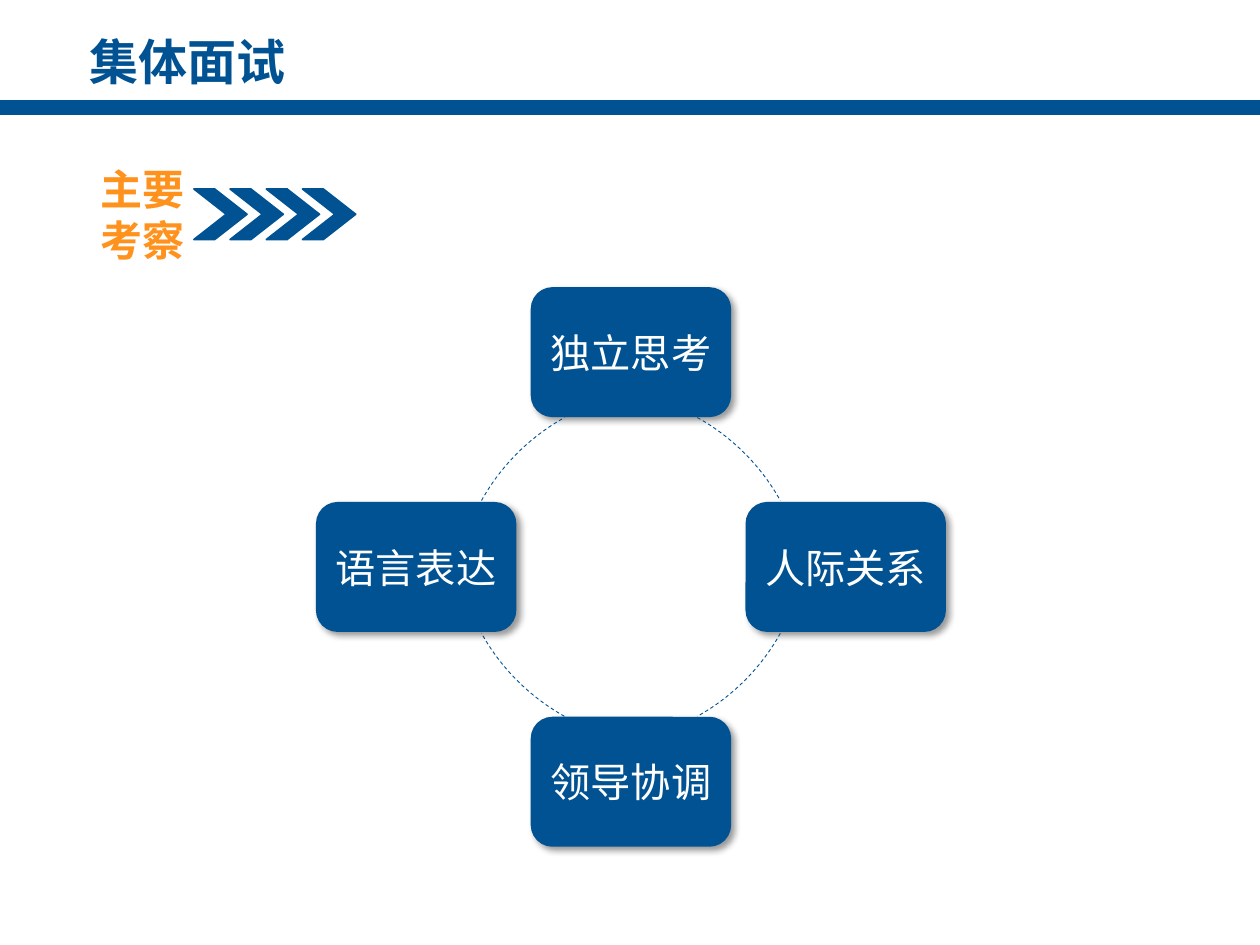
from dataclasses import dataclass
from typing import NamedTuple

from lxml.etree import SubElement
from pptx import Presentation
from pptx.dml.color import RGBColor
from pptx.enum.dml import MSO_LINE
from pptx.enum.shapes import MSO_SHAPE as Preset
from pptx.enum.text import MSO_ANCHOR as Anchor, PP_ALIGN as Align
from pptx.oxml import parse_xml
from pptx.oxml.ns import nsdecls, qn
from pptx.util import Cm, Pt


@dataclass(frozen=True)
class Theme:
    blue: RGBColor = RGBColor(0x00, 0x52, 0x92)
    orange: RGBColor = RGBColor(0xFF, 0x92, 0x1D)
    white: RGBColor = RGBColor(0xFF, 0xFF, 0xFF)
    font: str = "Noto Sans CJK SC"
    title_size: int = 28
    label_size: int = 24
    box_size: int = 23


class Box(NamedTuple):
    """A frame in centimetres."""
    left: float
    top: float
    width: float
    height: float

    def lengths(self) -> list:
        return [Cm(value) for value in self]


class Aspect(NamedTuple):
    """One station of the cycle, with its direction from the centre."""
    text: str
    across: int
    down: int


THEME = Theme()
ASPECTS = [
    Aspect("独立思考", 0, -1),
    Aspect("人际关系", 1, 0),
    Aspect("领导协调", 0, 1),
    Aspect("语言表达", -1, 0),
]

# Cycle geometry
CENTER_X, CENTER_Y = 12.72, 11.43
RADIUS = 4.33
BOX_WIDTH, BOX_HEIGHT = 4.04, 2.62
ARC_SHIFT = 0.77
ARC_START, ARC_SWEEP = 299.14, 31.72
ARC_UNIT = 0.6  # adjustment value per degree

# Chevron row
CHEVRON = Box(3.91, 3.81, 1.07, 1.02)
CHEVRON_COUNT, CHEVRON_STEP = 4, 0.73


def centered(x: float, y: float, width: float, height: float) -> Box:
    return Box(x - width / 2, y - height / 2, width, height)


def write(shape, text: str, size: int, color: RGBColor,
          bold: bool = False, align: Align = Align.LEFT) -> None:
    shape.text_frame.word_wrap = True
    paragraph = shape.text_frame.paragraphs[0]
    paragraph.text = text
    paragraph.alignment = align
    font = paragraph.font
    font.size, font.bold, font.name = Pt(size), bold, THEME.font
    font.color.rgb = color
    properties = paragraph._p.pPr.find(qn("a:defRPr"))
    SubElement(properties, qn("a:ea"), typeface=THEME.font)


def add_solid(slide, preset: Preset, box: Box, outlined: bool = True):
    shape = slide.shapes.add_shape(preset, *box.lengths())
    shape.shadow.inherit = False
    shape.fill.solid()
    shape.fill.fore_color.rgb = THEME.blue
    if outlined:
        shape.line.color.rgb = THEME.blue
        shape.line.width = Pt(1)
    else:
        shape.line.fill.background()
    return shape


def add_drop_shadow(shape) -> None:
    effects = shape._element.spPr.find(qn("a:effectLst"))
    effects.append(parse_xml(
        f'<a:outerShdw {nsdecls("a")} blurRad="{Pt(4)}" dist="{Pt(3)}" '
        'dir="2700000" algn="tl" rotWithShape="0"><a:srgbClr val="000000">'
        '<a:alpha val="40000"/></a:srgbClr></a:outerShdw>'))


def add_aspect(slide, aspect: Aspect) -> None:
    box = centered(CENTER_X + aspect.across * RADIUS,
                   CENTER_Y + aspect.down * RADIUS, BOX_WIDTH, BOX_HEIGHT)
    shape = add_solid(slide, Preset.ROUNDED_RECTANGLE, box, outlined=False)
    add_drop_shadow(shape)
    shape.text_frame.vertical_anchor = Anchor.MIDDLE
    write(shape, aspect.text, THEME.box_size, THEME.white, align=Align.CENTER)


def add_arc(slide, index: int, start: Aspect, end: Aspect) -> None:
    # Each arc's centre lies slightly away from the corner it spans
    x = CENTER_X - ARC_SHIFT * (start.across + end.across)
    y = CENTER_Y - ARC_SHIFT * (start.down + end.down)
    box = centered(x, y, 2 * RADIUS, 2 * RADIUS)
    arc = slide.shapes.add_shape(Preset.ARC, *box.lengths())
    arc.shadow.inherit = False
    first = (ARC_START + 90 * index) % 360
    arc.adjustments[0] = first * ARC_UNIT
    arc.adjustments[1] = (first + ARC_SWEEP) * ARC_UNIT
    arc.fill.background()
    arc.line.color.rgb = THEME.blue
    arc.line.width = Pt(0.5)
    arc.line.dash_style = MSO_LINE.DASH


def main() -> None:
    presentation = Presentation()
    presentation.slide_width, presentation.slide_height = Cm(25.4), Cm(19.05)
    slide = presentation.slides.add_slide(presentation.slide_layouts[5])

    # Title and rule
    title = slide.shapes.title
    title.left, title.top, title.width, title.height = Box(
        1.55, 0.51, 4.9, 1.45).lengths()
    write(title, "集体面试", THEME.title_size, THEME.blue, bold=True)
    add_solid(slide, Preset.RECTANGLE, Box(0, 2.03, 25.4, 0.28))

    # Cycle of aspects
    for index, aspect in enumerate(ASPECTS):
        add_aspect(slide, aspect)
        add_arc(slide, index, aspect, ASPECTS[(index + 1) % len(ASPECTS)])

    # Label with chevrons
    label = slide.shapes.add_textbox(*Box(1.78, 3.18, 2.36, 2.31).lengths())
    write(label, "主要考察", THEME.label_size, THEME.orange, bold=True)
    for index in range(CHEVRON_COUNT):
        box = CHEVRON._replace(left=CHEVRON.left + index * CHEVRON_STEP)
        add_solid(slide, Preset.CHEVRON, box).adjustments[0] = 0.64

    presentation.save("out.pptx")


if __name__ == "__main__":
    main()
